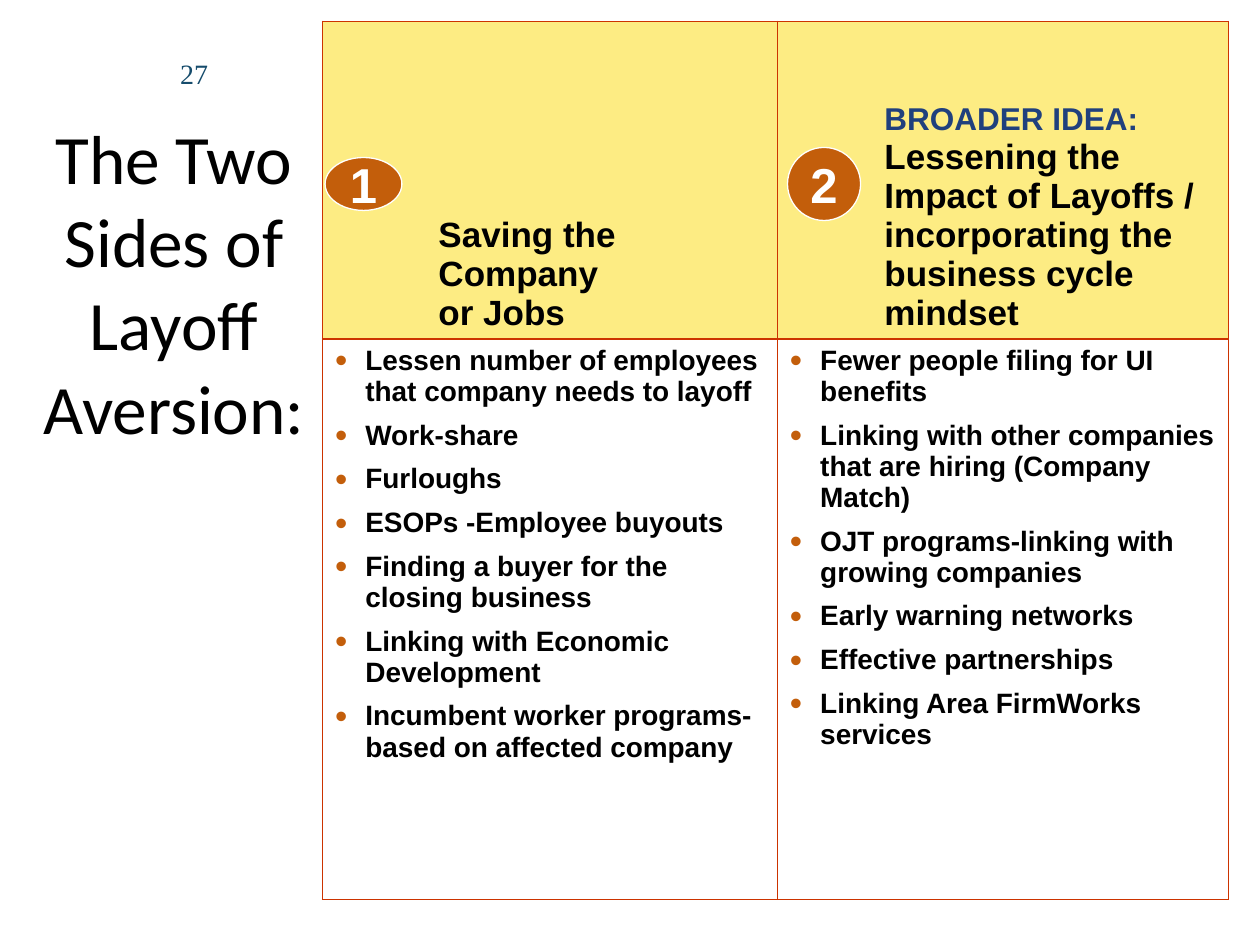
from lxml import etree
from pptx import Presentation, util as u
from pptx.dml.color import RGBColor
from pptx.enum import shapes, text
from pptx.oxml import ns

BLACK = RGBColor(0, 0, 0)
WHITE = RGBColor(0xFF, 0xFF, 0xFF)
YELLOW = RGBColor(0xFD, 0xEC, 0x83)
ORANGE = RGBColor(0xC3, 0x5E, 0x0B)
RED = RGBColor(0xCC, 0x33, 0x00)
NAVY = RGBColor(0x20, 0x40, 0x7D)
TEAL = RGBColor(0x16, 0x4C, 0x6C)

LEFT, TOP = 2.56, 0.17
COLUMNS = (3.61, 3.58)
ROWS = (2.52, 4.45)
BULLET_INDENT = 0.24

HEADERS = [
    (0.82, [("Saving the \vCompany \vor Jobs", 20, BLACK)]),
    (0.75, [("BROADER IDEA:", 18, NAVY),
            (" Lessening the Impact of Layoffs / incorporating the business cycle mindset",
             20, BLACK)]),
]
POINTS = [
    ["Lessen number of employees that company needs to layoff",
     "Work-share",
     "Furloughs",
     "ESOPs -Employee buyouts",
     "Finding a buyer for the closing business",
     "Linking with Economic Development",
     "Incumbent worker programs- based on affected company"],
    ["Fewer people filing for UI benefits",
     "Linking with other companies that are hiring (Company Match)",
     "OJT programs-linking with growing companies",
     "Early warning networks",
     "Effective partnerships",
     "Linking Area FirmWorks services"],
]
BADGES = [("1", 2.58, 1.25, 0.61, 0.42), ("2", 6.25, 1.17, 0.58, 0.58)]


def write(para, words, size, color, name="Arial", bold=True):
    """Add words to a paragraph, turning each \\v into a line break."""
    for number, line in enumerate(words.split("\v")):
        if number:
            para.add_line_break()
        span = para.add_run()
        span.text = line
        span.font.color.rgb = color
        for key, value in {"size": u.Pt(size), "name": name, "bold": bold}.items():
            setattr(span.font, key, value)


def add_xml(parent, tag, **values):
    return etree.SubElement(parent, ns.qn(tag), values)


deck = Presentation()
deck.slide_width, deck.slide_height = u.Inches(10), u.Inches(7.5)
page = deck.slides.add_slide(deck.slide_layouts[5])

# Title and page number
title = page.shapes.title
number_box = page.shapes.add_textbox(0, 0, 0, 0)
labels = [
    (title, (0.17, 1.25, 2.42, 1.97), 0.1,
     ("The Two Sides of Layoff Aversion:", 39.6, BLACK, "Calibri", False)),
    (number_box, (1.29, 0.34, 0.5, 0.48), 0.05,
     ("27", 16, TEAL, "Times New Roman", False)),
]
for box, place, inset, words in labels:
    box.left, box.top, box.width, box.height = map(u.Inches, place)
    frame = box.text_frame
    for key, value in {"word_wrap": True, "auto_size": text.MSO_AUTO_SIZE.NONE,
                       "vertical_anchor": text.MSO_ANCHOR.MIDDLE,
                       "margin_left": u.Inches(inset),
                       "margin_right": u.Inches(inset)}.items():
        setattr(frame, key, value)
    frame.paragraphs[0].alignment = text.PP_ALIGN.CENTER
    write(frame.paragraphs[0], *words)

# Table with a heading and a bulleted list in each column
table = page.shapes.add_table(
    len(ROWS), len(COLUMNS), u.Inches(LEFT), u.Inches(TOP),
    u.Inches(sum(COLUMNS)), u.Inches(sum(ROWS))).table
table.first_row = table.horz_banding = False
for column, width in zip(table.columns, COLUMNS):
    column.width = u.Inches(width)
for row, height in zip(table.rows, ROWS):
    row.height = u.Inches(height)

for index, (indent, spans) in enumerate(HEADERS):
    cell = table.cell(0, index)
    cell.vertical_anchor = text.MSO_ANCHOR.BOTTOM
    para = cell.text_frame.paragraphs[0]
    para.space_before = u.Pt(4)
    para._p.get_or_add_pPr().set("marL", str(u.Inches(indent)))
    for span in spans:
        write(para, *span)

for index, points in enumerate(POINTS):
    frame = table.cell(1, index).text_frame
    for number, point in enumerate(points):
        para = frame.add_paragraph() if number else frame.paragraphs[0]
        para.space_before = u.Pt(7.2)
        props = para._p.get_or_add_pPr()
        props.set("marL", str(u.Inches(BULLET_INDENT)))
        props.set("indent", str(-u.Inches(BULLET_INDENT)))
        add_xml(add_xml(props, "a:buClr"), "a:srgbClr", val=str(ORANGE))
        add_xml(props, "a:buSzPct", val="125000")
        add_xml(props, "a:buFont", typeface="Arial")
        add_xml(props, "a:buChar", char="•")
        write(para, point, 16, BLACK)

for row, color in enumerate((YELLOW, WHITE)):
    for cell in table.rows[row].cells:
        props = cell._tc.get_or_add_tcPr()
        for side in ("a:lnL", "a:lnR", "a:lnT", "a:lnB"):
            border = add_xml(props, side, w=str(u.Pt(1)))
            add_xml(add_xml(border, "a:solidFill"), "a:srgbClr", val=str(RED))
        cell.fill.solid()
        cell.fill.fore_color.rgb = color

# Numbered badges over the headings
for label, *place in BADGES:
    badge = page.shapes.add_shape(shapes.MSO_SHAPE.OVAL, *map(u.Inches, place))
    badge.shadow.inherit = False
    badge.fill.solid()
    badge.fill.fore_color.rgb = ORANGE
    badge.line.color.rgb = WHITE
    badge.line.width = u.Pt(0.75)
    frame = badge.text_frame
    frame.word_wrap = False
    frame.vertical_anchor = text.MSO_ANCHOR.MIDDLE
    frame.paragraphs[0].alignment = text.PP_ALIGN.CENTER
    write(frame.paragraphs[0], label, 28, WHITE)

deck.save("out.pptx")
